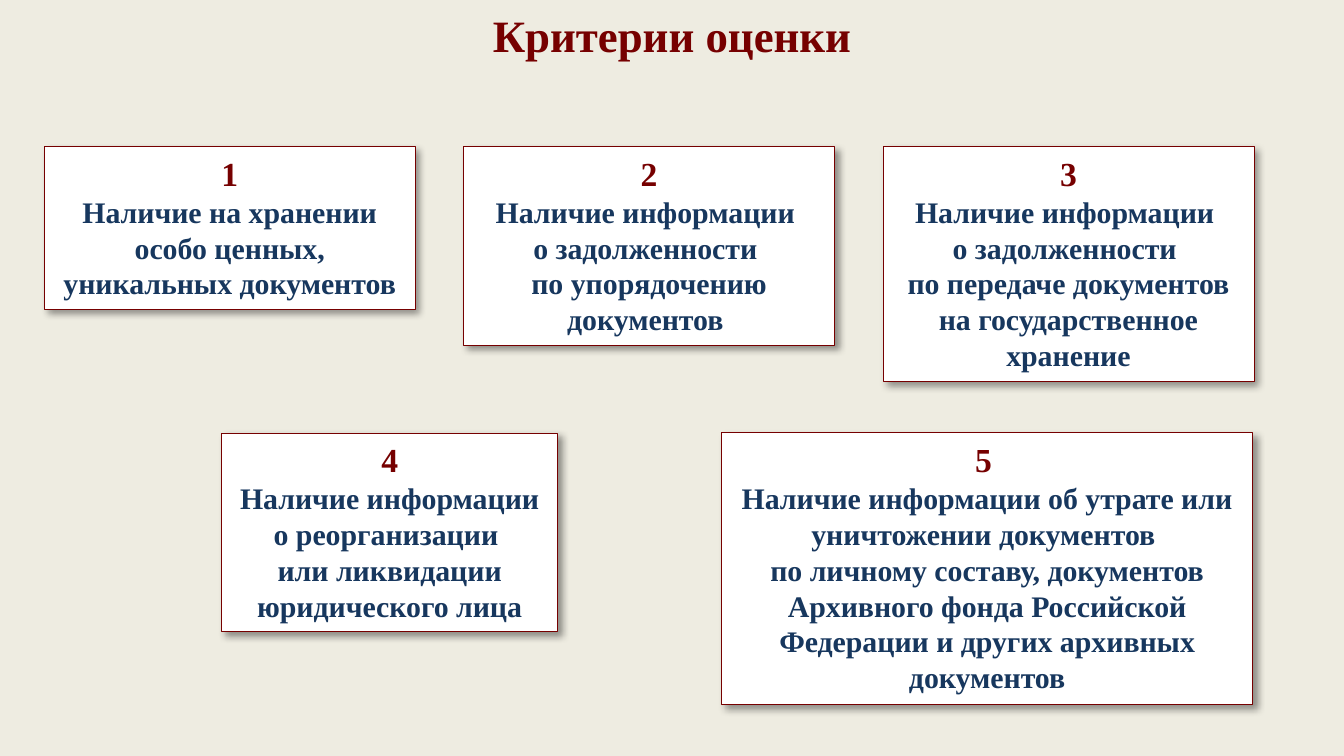
from dataclasses import dataclass

from lxml import etree
from pptx import Presentation
from pptx.dml.color import RGBColor
from pptx.enum.shapes import MSO_SHAPE
from pptx.enum.text import MSO_ANCHOR, MSO_AUTO_SIZE, PP_ALIGN
from pptx.oxml.ns import qn
from pptx.util import Inches, Pt


@dataclass(frozen=True)
class Theme:
    font: str = "Times New Roman"
    background: RGBColor = RGBColor(0xEE, 0xEC, 0xE1)
    card: RGBColor = RGBColor(0xFF, 0xFF, 0xFF)
    accent: RGBColor = RGBColor(0x76, 0x00, 0x00)
    body: RGBColor = RGBColor(0x17, 0x37, 0x5E)
    title_size: Pt = Pt(24)
    number_size: Pt = Pt(18)
    body_size: Pt = Pt(16)


THEME = Theme()
LINE_HEIGHT = 0.27
CARD_BASE = 0.4
TOP_ROW, BOTTOM_ROW = 1.09, 3.22
TOP_LEFT, TOP_STEP, TOP_WIDTH = 0.33, 3.12, 2.76

# Criterion text and the number of lines it fills
TOP_CRITERIA = [
    ("\nНаличие на хранении особо ценных, уникальных документов", 3),
    ("\nНаличие информации \nо задолженности \nпо упорядочению документов ", 4),
    ("\nНаличие информации \nо задолженности \n"
     "по передаче документов на государственное хранение", 5),
]
# Left, width, border width in points, text, lines
BOTTOM_CRITERIA = [
    (1.65, 2.5, 0.25,
     "\nНаличие информации о реорганизации \nили ликвидации юридического лица", 4),
    (5.37, 3.95, 0.75,
     " \nНаличие информации об утрате или уничтожении документов \n"
     "по личному составу, документов Архивного фонда Российской "
     "Федерации и других архивных документов", 6),
]


def place(shape, box):
    shape.left, shape.top, shape.width, shape.height = map(Inches, box)


def style_frame(frame):
    frame.word_wrap = True
    frame.auto_size = MSO_AUTO_SIZE.NONE
    frame.vertical_anchor = MSO_ANCHOR.TOP
    para = frame.paragraphs[0]
    para.alignment = PP_ALIGN.CENTER
    para.font.name = THEME.font
    para.font.bold = True
    return para


def add_span(para, text, size, color):
    span = para.add_run()
    span.text = text
    span.font.size = size
    span.font.color.rgb = color


def add_shadow(shape):
    """Soft black shadow towards the lower right."""
    shape.shadow.inherit = False
    effects = shape.element.spPr.find(qn("a:effectLst"))
    shadow = etree.SubElement(
        effects, qn("a:outerShdw"), blurRad=str(Pt(4)), dist=str(Pt(3)),
        dir=str(45 * 60000), algn="tl", rotWithShape="0")
    color = etree.SubElement(shadow, qn("a:srgbClr"), val="000000")
    etree.SubElement(color, qn("a:alpha"), val="40000")


def add_title(page, box, text):
    title = page.shapes.title
    place(title, box)
    para = style_frame(title.text_frame)
    para.text = text
    para.font.size = THEME.title_size
    para.font.color.rgb = THEME.accent


def add_card(page, box, number, text, border=0.25):
    card = page.shapes.add_shape(MSO_SHAPE.RECTANGLE, *map(Inches, box))
    card.fill.solid()
    card.fill.fore_color.rgb = THEME.card
    card.line.color.rgb = THEME.accent
    card.line.width = Pt(border)
    add_shadow(card)
    para = style_frame(card.text_frame)
    add_span(para, str(number), THEME.number_size, THEME.accent)
    for index, line in enumerate(text.split("\n")):
        if index:
            para.add_line_break()
        if line:
            add_span(para, line, THEME.body_size, THEME.body)


def card_height(lines):
    return CARD_BASE + lines * LINE_HEIGHT


def add_top_row(page):
    for index, (text, lines) in enumerate(TOP_CRITERIA):
        box = (TOP_LEFT + index * TOP_STEP, TOP_ROW, TOP_WIDTH, card_height(lines))
        add_card(page, box, index + 1, text)


def add_bottom_row(page):
    first = len(TOP_CRITERIA) + 1
    for number, (left, width, border, text, lines) in enumerate(BOTTOM_CRITERIA, first):
        box = (left, BOTTOM_ROW, width, card_height(lines))
        add_card(page, box, number, text, border)


def main():
    deck = Presentation()
    deck.slide_width = Inches(10)
    deck.slide_height = deck.slide_width * 9 // 16
    page = deck.slides.add_slide(deck.slide_layouts.get_by_name("Title Only"))
    page.background.fill.solid()
    page.background.fill.fore_color.rgb = THEME.background
    add_title(page, (0, 0.01, 10, 0.5), "Критерии оценки")
    add_top_row(page)
    add_bottom_row(page)
    deck.save("out.pptx")


if __name__ == "__main__":
    main()
